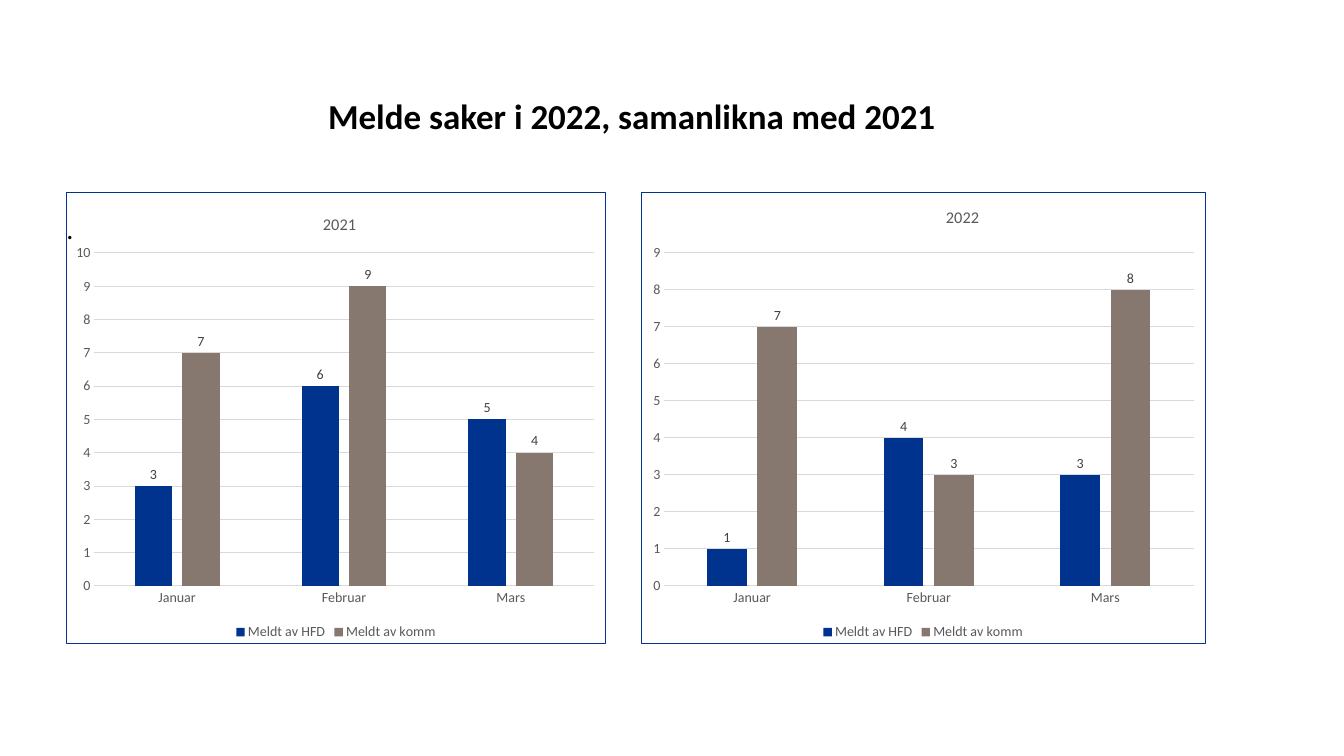
import pptx
import pptx.chart.data
import pptx.dml.color
import pptx.enum.chart
import pptx.enum.text
import pptx.oxml
import pptx.oxml.ns
import pptx.util

RGBColor = pptx.dml.color.RGBColor
BLUE = RGBColor(0x00, 0x33, 0x8D)
TAUPE = RGBColor(0x86, 0x78, 0x6F)
BLACK = RGBColor(0, 0, 0)
GRID_GREY = RGBColor(0xD9, 0xD9, 0xD9)
AXIS_GREY = RGBColor(0x59, 0x59, 0x59)
LABEL_GREY = RGBColor(0x40, 0x40, 0x40)

MONTHS = ["Januar", "Februar", "Mars"]
SERIES = {"Meldt av HFD": BLUE, "Meldt av komm": TAUPE}


class Deck:
    """Style and current slide; lengths are in cells of a 160 by 90 grid."""
    face = "Calibri"
    columns, rows = 160, 90

    def __init__(self):
        self.prs = pptx.Presentation()
        self.prs.slide_width = pptx.util.Inches(16)
        self.prs.slide_height = pptx.util.Inches(9)
        self.s = self.prs.slides.add_slide(self.prs.slide_layouts[6])

    def box(self, col, row, width, height):
        dx = self.prs.slide_width / self.columns
        dy = self.prs.slide_height / self.rows
        return [round(n) for n in (col * dx, row * dy, width * dx, height * dy)]

    def style(self, font, size, color, bold=False):
        font.name, font.size, font.bold = self.face, pptx.util.Pt(size), bold
        font.color.rgb = color

    def text(self, place, words, size, spacing, align, bold=False, before=0):
        tf = self.s.shapes.add_textbox(*self.box(*place)).text_frame
        tf.word_wrap = True
        tf.margin_left = tf.margin_right = tf.margin_top = tf.margin_bottom = 0
        p = tf.paragraphs[0]
        p.alignment = align
        p.line_spacing = pptx.util.Pt(spacing)
        p.space_before = pptx.util.Pt(before)
        r = p.add_run()
        r.text = words
        self.style(r.font, size, BLACK, bold)

    def layout(self, parent, after, x, y, size=None, inner=False):
        """Place a chart part by shares of the chart area."""
        values = {"xMode": "edge", "yMode": "edge", "x": x, "y": y}
        if inner:
            values = {"layoutTarget": "inner", **values}
        if size:
            values.update(w=size[0], h=size[1])
        parts = "".join(f'<c:{k} val="{v}"/>' for k, v in values.items())
        for old in parent.findall(pptx.oxml.ns.qn("c:layout")):
            parent.remove(old)
        node = pptx.oxml.parse_xml(
            f'<c:layout {pptx.oxml.ns.nsdecls("c")}>'
            f'<c:manualLayout>{parts}</c:manualLayout></c:layout>')
        if after is None:
            parent.insert(0, node)
        else:
            after.addnext(node)

    def border(self, chart, color):
        chart.font._rPr.getparent().getparent().getparent().addprevious(
            pptx.oxml.parse_xml(
                f'<c:spPr {pptx.oxml.ns.nsdecls("c", "a")}><a:noFill/>'
                f'<a:ln w="9525"><a:solidFill><a:srgbClr val="{color}"/>'
                '</a:solidFill></a:ln></c:spPr>'))

    def axis(self, axis):
        axis.major_tick_mark = pptx.enum.chart.XL_TICK_MARK.NONE
        axis.minor_tick_mark = pptx.enum.chart.XL_TICK_MARK.NONE
        self.style(axis.tick_labels.font, 12, AXIS_GREY)

    def line(self, line):
        line.color.rgb = GRID_GREY
        line.width = pptx.util.Pt(0.75)

    def columns_chart(self, place, year, values, top, title_at, plot_at, plot_size):
        data = pptx.chart.data.CategoryChartData(number_format="General")
        data.categories = MONTHS
        for name, numbers in zip(SERIES, values):
            data.add_series(name, numbers)
        kind = pptx.enum.chart.XL_CHART_TYPE.COLUMN_CLUSTERED
        chart = self.s.shapes.add_chart(kind, *self.box(*place), data).chart
        self.style(chart.font, 10, BLACK)
        self.border(chart, BLUE)

        # Chart title
        chart.has_title = True
        r = chart.chart_title.text_frame.paragraphs[0].add_run()
        r.text = year
        self.style(r.font, 14, AXIS_GREY)
        title = chart.chart_title._element
        self.layout(title, title.find(pptx.oxml.ns.qn("c:tx")), *title_at)

        # Axes and legend
        self.axis(chart.category_axis)
        self.line(chart.category_axis.format.line)
        self.axis(chart.value_axis)
        chart.value_axis.format.line.fill.background()
        self.line(chart.value_axis.major_gridlines.format.line)
        chart.value_axis.minimum_scale = 0
        chart.value_axis.maximum_scale = top
        chart.value_axis.major_unit = 1
        chart.has_legend = True
        chart.legend.position = pptx.enum.chart.XL_LEGEND_POSITION.BOTTOM
        chart.legend.include_in_layout = False
        self.style(chart.legend.font, 12, AXIS_GREY)

        # Columns and value labels
        plot = chart.plots[0]
        plot.gap_width, plot.overlap, plot.vary_by_categories = 219, -27, False
        for series, color in zip(plot.series, SERIES.values()):
            series.format.fill.solid()
            series.format.fill.fore_color.rgb = color
            series.invert_if_negative = False
            labels = series.data_labels
            labels.show_value = True
            labels.position = pptx.enum.chart.XL_LABEL_POSITION.OUTSIDE_END
            self.style(labels.font, 12, LABEL_GREY)
        area = plot._element.getparent()
        self.layout(area, None, *plot_at, plot_size, inner=True)


def main():
    deck = Deck()
    align = pptx.enum.text.PP_ALIGN

    # Body text and heading
    deck.text((7.9, 25.6, 140.1, 57.1), ".", 24, 26, align.LEFT, before=0)
    deck.text((7.9, 11.8, 134.7, 9.4), "Melde saker i 2022, samanlikna med 2021",
              30, 32, align.CENTER, bold=True)

    # One chart for each year
    deck.columns_chart((7.9, 22.8, 64.2, 53.9), "2021", [(3, 6, 5), (7, 9, 4)],
                       10, (0.47, 0.04), (0.05, 0.135), (0.93, 0.737))
    deck.columns_chart((76.3, 22.8, 67.2, 53.9), "2022", [(1, 4, 3), (7, 3, 8)],
                       9, (0.535, 0.025), (0.04, 0.135), (0.94, 0.737))

    deck.prs.save("out.pptx")


if __name__ == "__main__":
    main()
